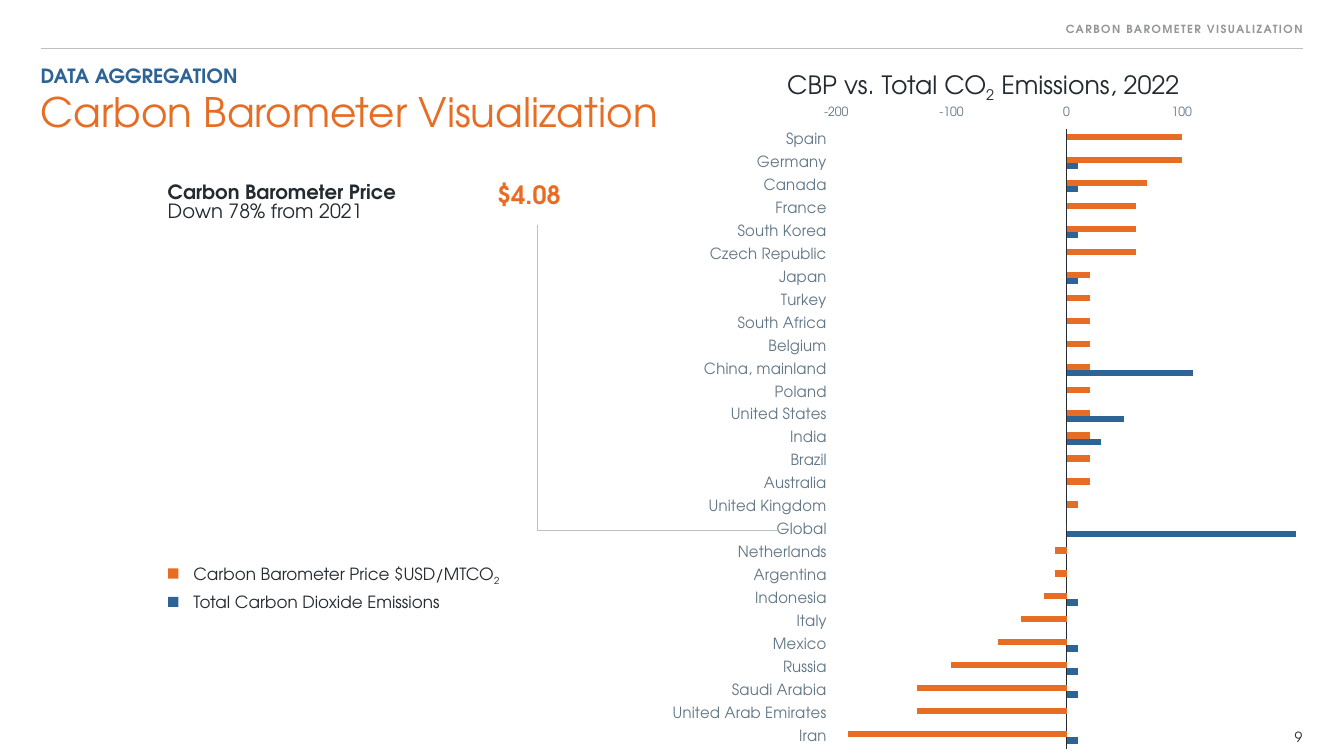
from lxml import etree
from pptx import Presentation
from pptx.chart.data import CategoryChartData
from pptx.dml.color import RGBColor
from pptx.enum.chart import XL_CHART_TYPE, XL_TICK_LABEL_POSITION, XL_TICK_MARK
from pptx.enum.shapes import MSO_CONNECTOR, MSO_SHAPE
from pptx.enum.text import MSO_ANCHOR, PP_ALIGN
from pptx.oxml import parse_xml
from pptx.oxml.ns import nsdecls, qn
from pptx.util import Pt

BAR_CLUSTERED = XL_CHART_TYPE.BAR_CLUSTERED
LOW = XL_TICK_LABEL_POSITION.LOW
TICK_NONE, TICK_OUT = XL_TICK_MARK.NONE, XL_TICK_MARK.OUTSIDE
STRAIGHT, RECTANGLE = MSO_CONNECTOR.STRAIGHT, MSO_SHAPE.RECTANGLE
TOP, MIDDLE = MSO_ANCHOR.TOP, MSO_ANCHOR.MIDDLE
LEFT, RIGHT = PP_ALIGN.LEFT, PP_ALIGN.RIGHT

FONT = "TeX Gyre Adventor"
ORANGE = RGBColor(0xE8, 0x6D, 0x24)
BLUE = RGBColor(0x2E, 0x63, 0x96)
INK = RGBColor(0x23, 0x2A, 0x30)
SLATE = RGBColor(0x62, 0x76, 0x86)
GRAY = RGBColor(0x93, 0x95, 0x98)
RULE = RGBColor(0xBE, 0xBF, 0xC1)
WHITE = RGBColor(0xFF, 0xFF, 0xFF)

# Country, carbon barometer price, total emissions
COUNTRIES = [
    ("Spain", 100, 0), ("Germany", 100, 10), ("Canada", 70, 10), ("France", 60, 0),
    ("South Korea", 60, 10), ("Czech Republic", 60, 0), ("Japan", 20, 10),
    ("Turkey", 20, 0), ("South Africa", 20, 0), ("Belgium", 20, 0),
    ("China, mainland", 20, 110), ("Poland", 20, 0), ("United States", 20, 50),
    ("India", 20, 30), ("Brazil", 20, 0), ("Australia", 20, 0),
    ("United Kingdom", 10, 0), ("Global", 0, 290), ("Netherlands", -10, 0),
    ("Argentina", -10, 0), ("Indonesia", -20, 10), ("Italy", -40, 0),
    ("Mexico", -60, 10), ("Russia", -100, 10), ("Saudi Arabia", -130, 10),
    ("United Arab Emirates", -130, 0), ("Iran", -190, 10),
]


def style_font(font, size, color, bold=False):
    font.name, font.size, font.bold = FONT, Pt(size), bold
    font.color.rgb = color


def add_span(para, text, size, color, bold=False, baseline=None):
    span = para.add_run()
    span.text = text
    style_font(span.font, size, color, bold)
    if baseline:
        span.font._element.set("baseline", str(baseline))
    return span


def add_formula(para, before, after, size):
    """Text holding a subscript 2."""
    add_span(para, before, size, INK)
    add_span(para, "2", size, INK, baseline=-25000)
    if after:
        add_span(para, after, size, INK)


def place(shape, box):
    shape.left, shape.top, shape.width, shape.height = (Pt(n) for n in box)


def set_frame(frame, anchor=TOP, side=0):
    frame.word_wrap = True
    frame.vertical_anchor = anchor
    frame.margin_left = frame.margin_right = Pt(side)
    frame.margin_top = frame.margin_bottom = Pt(3.6)


def add_text_box(page, box, anchor=TOP, side=7.2):
    frame = page.shapes.add_textbox(*(Pt(n) for n in box)).text_frame
    set_frame(frame, anchor, side)
    return frame.paragraphs[0]


def add_line(shapes, start, end):
    line = shapes.add_connector(STRAIGHT, *(Pt(n) for n in start + end))
    line.line.color.rgb, line.line.width = RULE, Pt(0.5)
    etree.SubElement(line._element.spPr, qn("a:effectLst"))


def build_header(page, box):
    left, top, width, height = box
    # Running head
    tag = page.placeholders[1]
    place(tag, (left, top, width, 17.3))
    set_frame(tag.text_frame)
    para = tag.text_frame.paragraphs[0]
    props = para._element.get_or_add_pPr()
    props.set("marL", "0")
    props.set("indent", "0")
    etree.SubElement(props, qn("a:buNone"))
    para.alignment, para.space_before = RIGHT, Pt(0)
    span = add_span(para, "CARBON BAROMETER VISUALIZATION", 8, GRAY, True)
    span.font._element.set("spc", "100")
    add_line(page.shapes, (left, top + 22.4), (left + width, top + 22.4))

    # Kicker and title
    title = page.shapes.title
    place(title, (left, top + 29.6, width, height - 29.6))
    set_frame(title.text_frame)
    para = title.text_frame.paragraphs[0]
    para.alignment = LEFT
    add_span(para, "DATA AGGREGATION", 14, BLUE, True)
    para.add_line_break()
    add_span(para, "Carbon Barometer Visualization", 29, ORANGE)


def build_price_table(page, box):
    table = page.shapes.add_table(1, 2, *(Pt(n) for n in box)).table
    table.first_row = table.horz_banding = False
    table.columns[0].width = Pt(235.4)
    table.columns[1].width = Pt(box[2] - 235.4)
    contents = [
        [("Carbon Barometer Price", 14, INK, True), ("Down 78% from 2021", 14, INK, False)],
        [("$4.08", 18, ORANGE, True)],
    ]
    for cell, lines in zip(table.rows[0].cells, contents):
        cell.fill.solid()
        cell.fill.fore_color.rgb = WHITE
        cell.margin_left = cell.margin_right = 0
        frame = cell.text_frame
        for index, line in enumerate(lines):
            para = frame.add_paragraph() if index else frame.paragraphs[0]
            add_span(para, *line)


def build_chart(page, box):
    left, top, width, height = box
    names, prices, emissions = zip(*COUNTRIES)
    data = CategoryChartData()
    data.categories = names
    data.add_series("Series 1", prices)
    data.add_series("Series 2", emissions)
    chart = page.shapes.add_chart(BAR_CLUSTERED, *(Pt(n) for n in box), data).chart
    chart.has_title = chart.has_legend = False
    style_font(chart.font, 10, INK)

    # Bars
    plot = chart.plots[0]
    plot.gap_width, plot.overlap, plot.vary_by_categories = 165, 0, False
    for series, color in zip(plot.series, (ORANGE, BLUE)):
        series.invert_if_negative = False
        series.format.fill.solid()
        series.format.fill.fore_color.rgb = color

    # Axes
    countries, scale = chart.category_axis, chart.value_axis
    for axis, size, tick in ((countries, 11, TICK_NONE), (scale, 9, TICK_OUT)):
        axis.has_major_gridlines = False
        axis.major_tick_mark, axis.minor_tick_mark = tick, TICK_NONE
        axis.tick_label_position = LOW
        style_font(axis.tick_labels.font, size, SLATE)
    countries.reverse_order = True
    countries.format.line.color.rgb = INK
    countries.format.line.width = Pt(1.25)
    scale.minimum_scale, scale.maximum_scale, scale.major_unit = -200, 199, 100
    scale.format.line.fill.background()

    # Plot area position
    area = chart._chartSpace.chart.plotArea
    for old in area.findall(qn("c:layout")):
        area.remove(old)
    area.insert(0, parse_xml(
        f'<c:layout {nsdecls("c")}><c:manualLayout><c:layoutTarget val="inner"/>'
        '<c:xMode val="edge"/><c:yMode val="edge"/><c:x val="0.269"/><c:y val="0.076"/>'
        '<c:w val="0.764"/><c:h val="0.902"/></c:manualLayout></c:layout>'))

    # Heading over the chart
    para = add_text_box(page, (left + 74.7, top - 9, 337, 28.8))
    add_formula(para, "CBP vs. Total CO", " Emissions, 2022", 18)


def build_legend(page, box):
    left, top, width, pitch = box
    for index, color in enumerate((ORANGE, BLUE)):
        row = top + index * pitch
        swatch = page.shapes.add_shape(RECTANGLE, Pt(left), Pt(row + 7.2), Pt(7.2), Pt(7.2))
        swatch.shadow.inherit = False
        swatch.fill.solid()
        swatch.fill.fore_color.rgb = color
        swatch.line.fill.background()
        para = add_text_box(page, (left + 10.8, row, width - 10.8, 21.6))
        if index == 0:
            add_formula(para, "Carbon Barometer Price $USD/MTCO", "", 12)
        else:
            add_span(para, "Total Carbon Dioxide Emissions", 12, INK)


def build_callout(page, box):
    """Elbow from the price down to the Global bar."""
    left, top, width, height = box
    elbow = page.shapes.add_group_shape().shapes
    corner = (left, top + height)
    add_line(elbow, (left, top), corner)
    add_line(elbow, corner, (left + width, top + height))


def main():
    deck = Presentation()
    deck.slide_width, deck.slide_height = Pt(960), Pt(540)
    page = deck.slides.add_slide(deck.slide_layouts[1])
    build_header(page, (29, 12.2, 901.8, 88.6))
    build_price_table(page, (119.8, 128.9, 486, 66.2))
    build_chart(page, (480.5, 54.7, 445, 491))
    build_legend(page, (120.2, 398.9, 392.4, 20.2))
    build_callout(page, (383.8, 160.6, 171.3, 218.1))
    # Page number
    para = add_text_box(page, (869.8, 517, 60.5, 18.7), MIDDLE, 0)
    para.alignment = RIGHT
    add_span(para, "9", 10, INK)
    deck.save("out.pptx")


if __name__ == "__main__":
    main()
